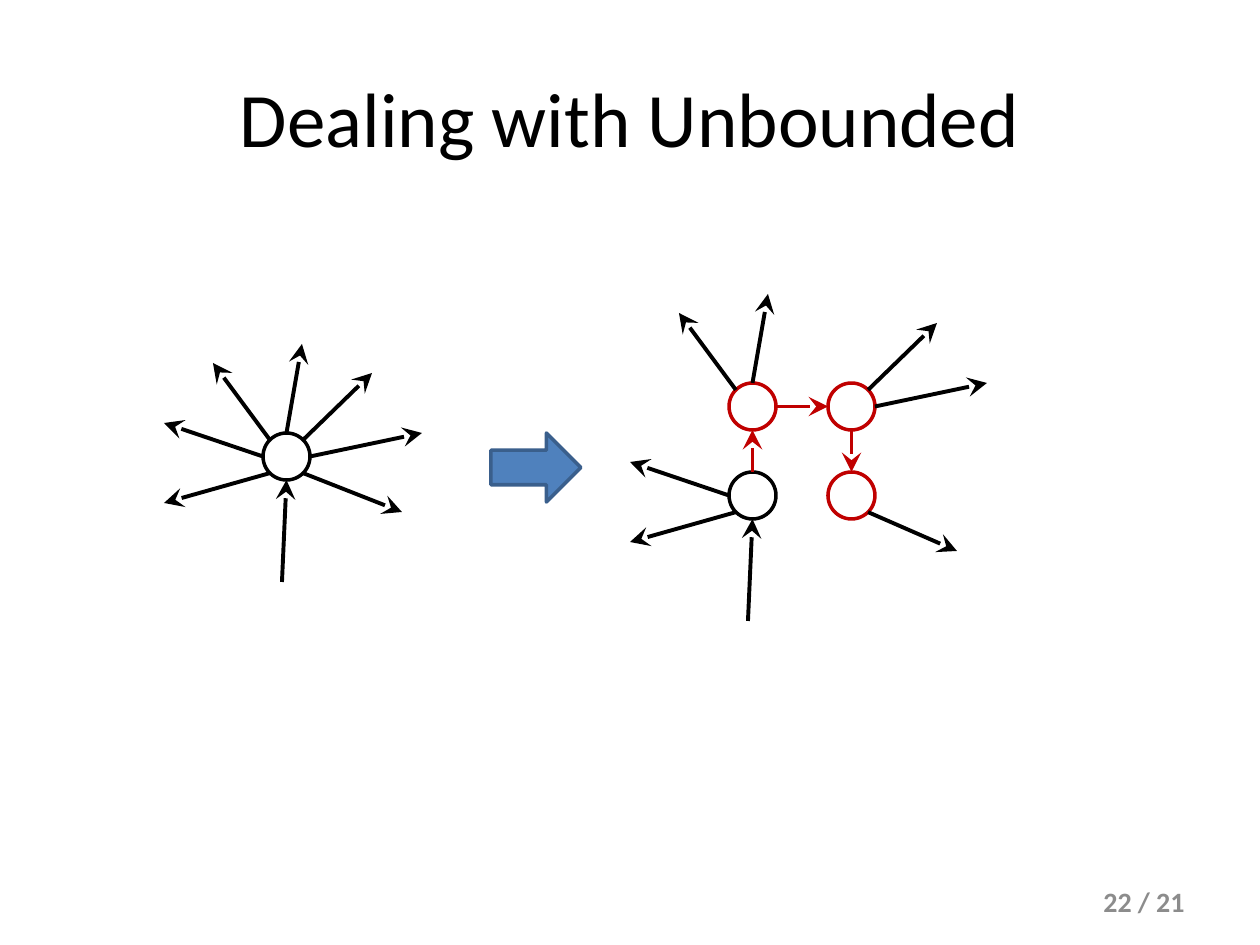
"""Build the slide that splits a node of unbounded degree into bounded ones."""
import pptx
import pptx.dml.color
import pptx.enum.shapes
import pptx.enum.text
import pptx.oxml.ns
import pptx.util
from lxml import etree

PX = 914400 / 126
COLORS = {"black": "000000", "red": "C00000", "white": "FFFFFF",
          "gray": "8C8C8C", "blue": "4F81BD", "navy": "3A5F8C"}
TITLE = "Dealing with Unbounded"
PAGE = "22 / 21"

NODE_SIZE = 47
CORNER = 0.146
SIDES = {"N": (0.5, 0), "S": (0.5, 1), "W": (0, 0.5), "E": (1, 0.5),
         "NW": (CORNER, CORNER), "NE": (1 - CORNER, CORNER),
         "SW": (CORNER, 1 - CORNER), "SE": (1 - CORNER, 1 - CORNER)}
SPOKES = {"NE": ("NE", 109, -60), "SE": ("SE", 139, 79), "N": ("N", 39, -89),
          "NW": ("NW", -50, -70), "SW": ("SW", -99, 70), "W": ("W", -99, -10),
          "E": ("E", 159, 0), "short SE": ("SE", 129, 79)}
INCOMING = (19, 149)
NODES = {
    "hub": (263, 433, "black", ["NE", "SE", "N", "NW", "SW", "W", "E"]),
    "entry": (729, 472, "black", ["SW", "W"]),
    "upper left": (729, 383, "red", ["N", "NW"]),
    "upper right": (828, 383, "red", ["NE", "E"]),
    "lower right": (828, 472, "red", ["short SE"]),
}
ENTERED = ["hub", "entry"]
LINKS = [("entry", "N", "upper left", "S"),
         ("upper left", "E", "upper right", "W"),
         ("upper right", "S", "lower right", "N")]


def px(value):
    return pptx.util.Emu(round(value * PX))


def rgb(name):
    return pptx.dml.color.RGBColor.from_string(COLORS[name])


def add_text(slide, text, box, size, color, align, bold=False):
    frame = slide.shapes.add_textbox(*map(px, box)).text_frame
    frame.word_wrap = True
    frame.vertical_anchor = pptx.enum.text.MSO_ANCHOR.MIDDLE
    paragraph = frame.paragraphs[0]
    paragraph.text = text
    paragraph.alignment = align
    font = paragraph.font
    font.name, font.size, font.bold = "Calibri", pptx.util.Pt(size), bold
    font.color.rgb = rgb(color)


def add_shape(slide, kind, box, fill, line):
    shape = slide.shapes.add_shape(kind, *map(px, box))
    shape.shadow.inherit = False
    shape.fill.solid()
    shape.fill.fore_color.rgb = rgb(fill)
    shape.line.color.rgb = rgb(line)
    shape.line.width = pptx.util.Pt(2)


def add_arrow(slide, start, end, color):
    straight = pptx.enum.shapes.MSO_CONNECTOR.STRAIGHT
    arrow = slide.shapes.add_connector(straight, *map(px, start + end))
    arrow.line.color.rgb = rgb(color)
    arrow.line.width = pptx.util.Pt(2.25)
    qn = pptx.oxml.ns.qn
    etree.SubElement(arrow.line._get_or_add_ln(), qn("a:tailEnd"),
                     type="stealth", w="lg", len="lg")
    etree.SubElement(arrow._element.spPr, qn("a:effectLst"))


def node_point(name, side):
    left, top = NODES[name][:2]
    across, down = SIDES[side]
    return left + across * NODE_SIZE, top + down * NODE_SIZE


def main():
    presentation = pptx.Presentation()
    presentation.slide_width, presentation.slide_height = px(1260), px(945)
    slide = presentation.slides.add_slide(presentation.slide_layouts[6])
    align = pptx.enum.text.PP_ALIGN
    shapes = pptx.enum.shapes.MSO_SHAPE

    add_text(slide, TITLE, (63, 38, 1134, 157), size=44, color="black",
             align=align.CENTER)
    add_text(slide, PAGE, (903, 876, 294, 50), size=16, color="gray",
             align=align.RIGHT, bold=True)
    add_shape(slide, shapes.RIGHT_ARROW, (491, 433, 90, 69), "blue", "navy")

    for name, (left, top, color, spokes) in NODES.items():
        add_shape(slide, shapes.OVAL, (left, top, NODE_SIZE, NODE_SIZE),
                  "white", color)
        for spoke in spokes:
            side, across, down = SPOKES[spoke]
            add_arrow(slide, node_point(name, side),
                      (left + across, top + down), "black")
    for name in ENTERED:
        left, top = NODES[name][:2]
        add_arrow(slide, (left + INCOMING[0], top + INCOMING[1]),
                  node_point(name, "S"), "black")
    for source, source_side, target, target_side in LINKS:
        add_arrow(slide, node_point(source, source_side),
                  node_point(target, target_side), "red")

    presentation.save("out.pptx")


if __name__ == "__main__":
    main()
